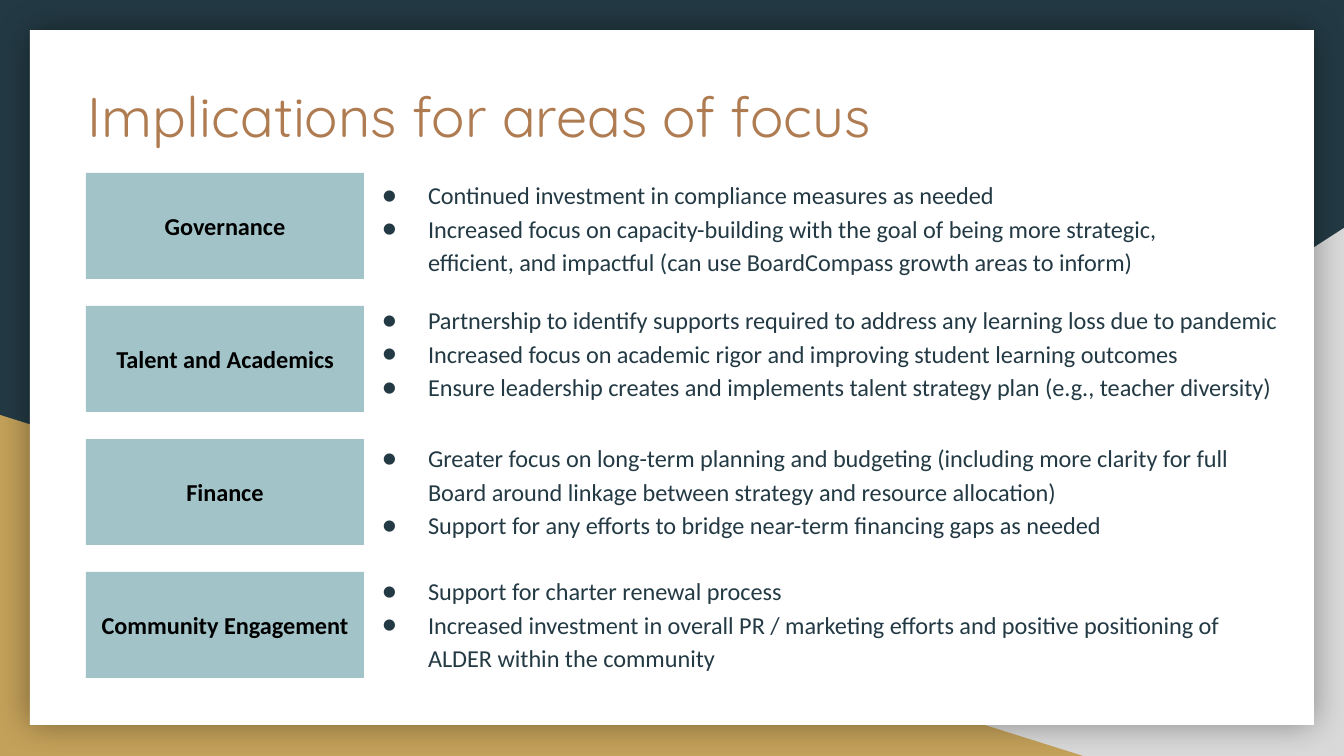
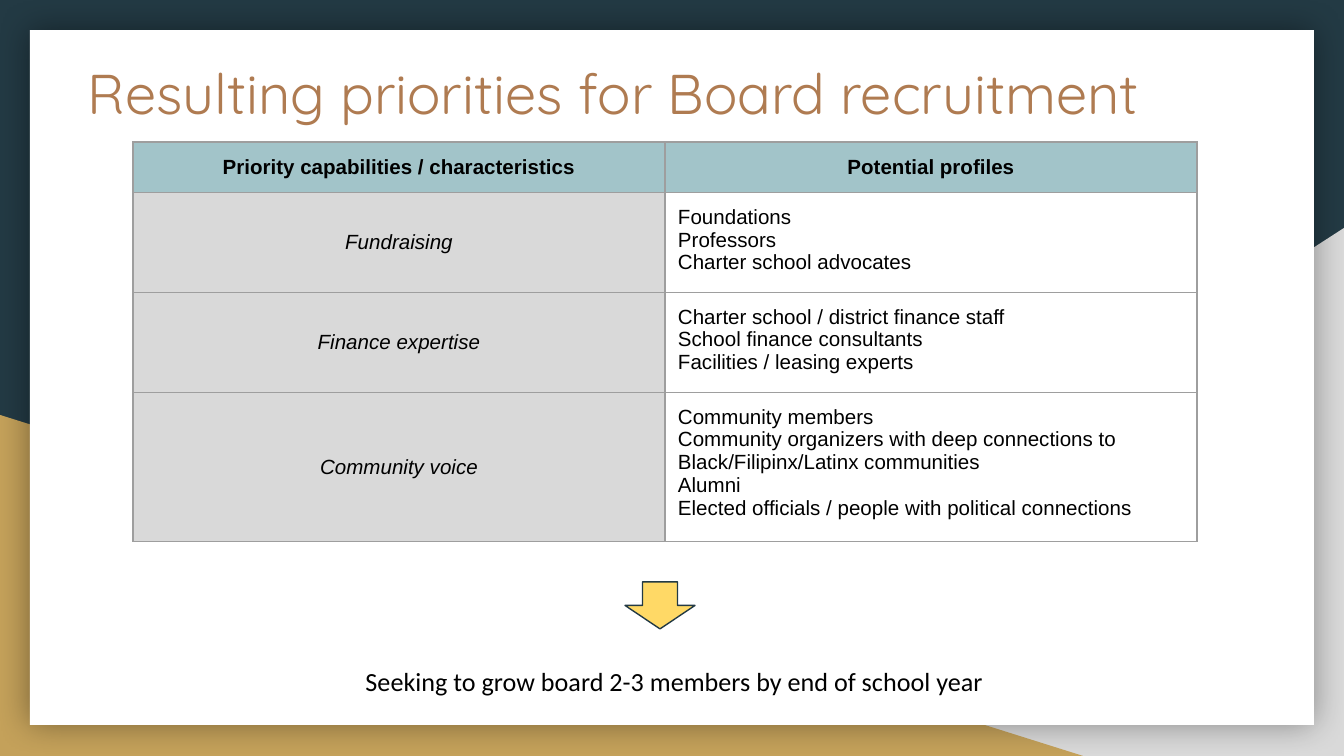
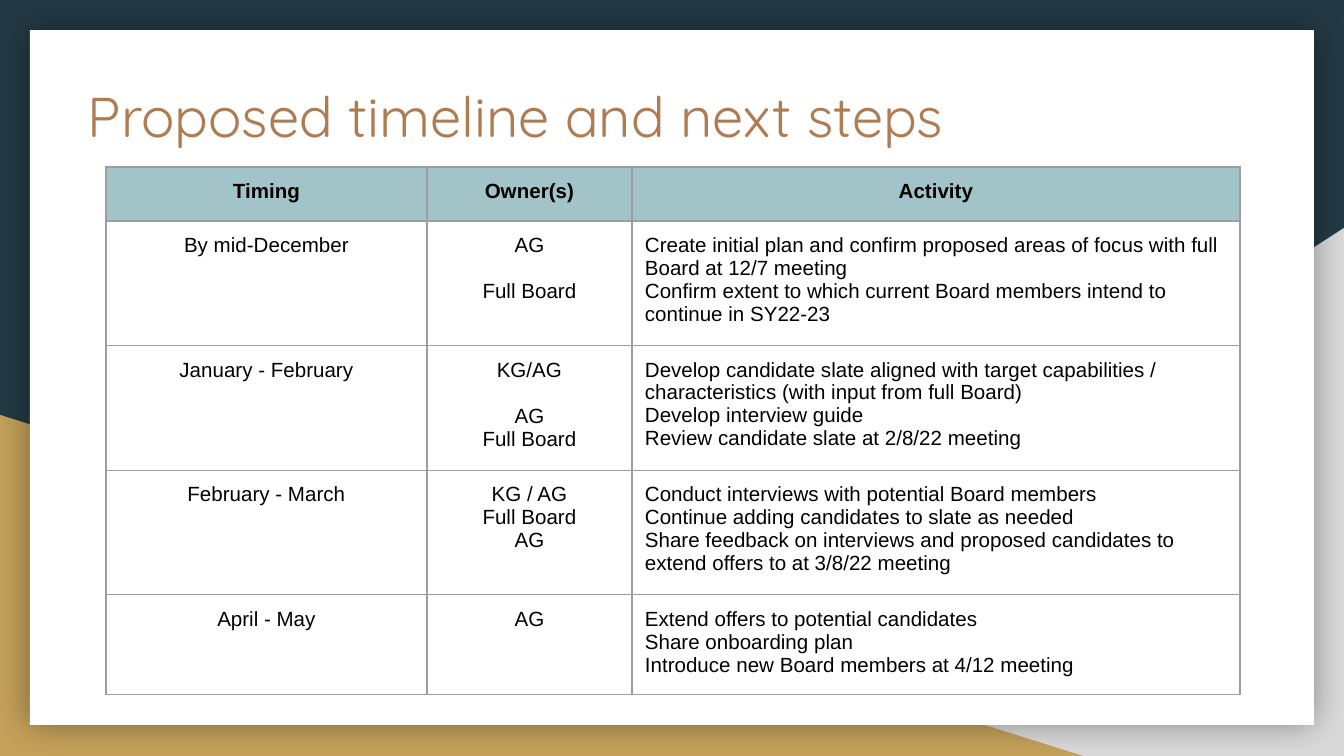
from lxml import etree
from pptx import Presentation
from pptx.dml.color import RGBColor
from pptx.enum.shapes import MSO_SHAPE
from pptx.enum.text import MSO_ANCHOR, PP_ALIGN
from pptx.oxml.ns import qn
from pptx.util import Pt

LEFT, CENTER = PP_ALIGN.LEFT, PP_ALIGN.CENTER
TOP, MIDDLE = MSO_ANCHOR.TOP, MSO_ANCHOR.MIDDLE
RECT, TRIANGLE = MSO_SHAPE.RECTANGLE, MSO_SHAPE.RIGHT_TRIANGLE
DOWN_ARROW = MSO_SHAPE.DOWN_ARROW

COLORS = {
    "navy": "233A44", "gold": "C4A15A", "gray": "D9D9D9", "white": "FFFFFF",
    "black": "000000", "copper": "AF7B51", "teal": "A2C4C9",
    "yellow": "FFD966", "border": "9E9E9E",
}
WIDTH, HEIGHT = 1344, 756
INSET = 13
CELL_LINE = 12.5  # height in points of one line of table text


def px(n):
    return round(n * 914400 / 134.4)


def rgb(name):
    return RGBColor.from_string(COLORS[name])


def sub(parent, tag, **attrs):
    return etree.SubElement(parent, qn(tag), {k: str(v) for k, v in attrs.items()})


class Deck:
    """Holds the presentation, its shared style and the current slide."""

    def __init__(self):
        self.prs = Presentation()
        self.prs.slide_width, self.prs.slide_height = px(WIDTH), px(HEIGHT)
        self.s = None

    def slide(self, title, title_top):
        self.s = self.prs.slides.add_slide(self.prs.slide_layouts[6])
        fill = self.s.background.fill
        fill.solid()
        fill.fore_color.rgb = rgb("navy")
        wedge = self.shape(TRIANGLE, 527, 228, 817, 528, "gray")
        wedge._element.spPr.find(qn("a:xfrm")).set("flipH", "1")
        self.shape(TRIANGLE, 0, 415, 1083, 341, "gold")
        self.soft_shadow(self.shape(RECT, 30, 30, 1284, 695, "white"))
        self.text(75, title_top, 1103, 140, title, size=30, font="Quicksand", color="copper")

    def shape(self, kind, x, y, w, h, fill, line=None):
        sp = self.s.shapes.add_shape(kind, px(x), px(y), px(w), px(h))
        sp.shadow.inherit = False
        sp.fill.solid()
        sp.fill.fore_color.rgb = rgb(fill)
        if line:
            sp.line.color.rgb = rgb(line)
            sp.line.width = Pt(0.75)
        else:
            sp.line.fill.background()
        return sp

    def soft_shadow(self, sp):
        effects = sp._element.spPr.find(qn("a:effectLst"))
        shadow = sub(effects, "a:outerShdw", blurRad=Pt(18), dist=0, algn="ctr", rotWithShape=0)
        color = sub(shadow, "a:srgbClr", val=COLORS["black"])
        sub(color, "a:alpha", val=40000)

    def fill_text(self, tf, text, size=13, font="Calibri", color="black", align=LEFT,
                  bold=False, italic=False, bullets=False):
        """Add one paragraph per line; an empty line becomes space before the next."""
        tf.word_wrap = True
        tf.margin_left = tf.margin_right = tf.margin_top = tf.margin_bottom = px(INSET)
        p, gap = tf.paragraphs[0], 0
        for i, line in enumerate(text.split("\n")):
            if not line:
                gap += CELL_LINE
                continue
            if i:
                p = tf.add_paragraph()
            p.alignment = align
            if gap:
                p.space_before = Pt(gap)
                gap = 0
            if bullets:
                self.bullet(p, color)
            r = p.add_run()
            r.text = line
            r.font.size, r.font.name = Pt(size), font
            r.font.bold, r.font.italic = bold, italic
            r.font.color.rgb = rgb(color)

    def bullet(self, p, color):
        p.line_spacing = 1.15
        pPr = p._p.get_or_add_pPr()
        pPr.set("marL", str(px(67)))
        pPr.set("indent", str(px(-46)))
        sub(sub(pPr, "a:buClr"), "a:srgbClr", val=COLORS[color])
        sub(pPr, "a:buFont", typeface="Calibri")
        sub(pPr, "a:buChar", char="●")

    def text(self, x, y, w, h, text, **style):
        tf = self.s.shapes.add_textbox(px(x), px(y), px(w), px(h)).text_frame
        self.fill_text(tf, text, **style)

    def label(self, x, y, w, h, text):
        tf = self.shape(RECT, x, y, w, h, "teal").text_frame
        tf.vertical_anchor = MIDDLE
        self.fill_text(tf, text, align=CENTER, bold=True)

    def table(self, x, y, widths, heights, rows, header, columns):
        """Draw rows, the first in the header style, the rest in their column's style."""
        tbl = self.s.shapes.add_table(len(rows), len(widths), px(x), px(y),
                                      px(sum(widths)), px(sum(heights))).table
        tbl.first_row = tbl.horz_banding = False
        for col, w in zip(tbl.columns, widths):
            col.width = px(w)
        for i, (h, row) in enumerate(zip(heights, rows)):
            tbl.rows[i].height = px(h)
            for j, text in enumerate(row):
                self.cell(tbl.cell(i, j), text, **(columns[j] if i else header))

    def cell(self, cell, text, fill=None, anchor=TOP, **style):
        self.fill_text(cell.text_frame, text, size=11, font="Arial", **style)
        cell.margin_left = cell.margin_right = px(INSET)
        cell.margin_top = cell.margin_bottom = px(INSET)
        cell.vertical_anchor = anchor
        tcPr = cell._tc.get_or_add_tcPr()
        for side in ("a:lnL", "a:lnR", "a:lnT", "a:lnB"):
            ln = sub(tcPr, side, w=Pt(0.75))
            sub(sub(ln, "a:solidFill"), "a:srgbClr", val=COLORS["border"])
        if fill:
            cell.fill.solid()
            cell.fill.fore_color.rgb = rgb(fill)
        else:
            cell.fill.background()


def focus_areas(deck):
    deck.slide("Implications for areas of focus", 69)
    areas = [
        ("Governance", 163, 909,
         "Continued investment in compliance measures as needed\n"
         "Increased focus on capacity-building with the goal of being more strategic, "
         "efficient, and impactful (can use BoardCompass growth areas to inform)"),
        ("Talent and Academics", 288, 949,
         "Partnership to identify supports required to address any learning loss due to pandemic\n"
         "Increased focus on academic rigor and improving student learning outcomes\n"
         "Ensure leadership creates and implements talent strategy plan (e.g., teacher diversity)"),
        ("Finance", 426, 909,
         "Greater focus on long-term planning and budgeting (including more clarity for full "
         "Board around linkage between strategy and resource allocation)\n"
         "Support for any efforts to bridge near-term financing gaps as needed"),
        ("Community Engagement", 559, 909,
         "Support for charter renewal process\n"
         "Increased investment in overall PR / marketing efforts and positive positioning of "
         "ALDER within the community"),
    ]
    for i, (name, top, width, points) in enumerate(areas):
        deck.text(348, top, width, min(239, HEIGHT - top), points, color="navy", bullets=True)
        deck.label(86, 173 + 133 * i, 278, 106, name)


def recruitment(deck):
    deck.slide("Resulting priorities for Board recruitment", 46)
    rows = [
        ("Priority capabilities / characteristics", "Potential profiles"),
        ("Fundraising", "Foundations\nProfessors\nCharter school advocates"),
        ("Finance expertise",
         "Charter school / district finance staff\nSchool finance consultants\n"
         "Facilities / leasing experts"),
        ("Community voice",
         "Community members\n"
         "Community organizers with deep connections to Black/Filipinx/Latinx communities\n"
         "Alumni\nElected officials / people with political connections"),
    ]
    deck.table(133, 142, [532, 532], [50, 95, 95, 141], rows,
               header=dict(fill="teal", anchor=MIDDLE, align=CENTER, bold=True),
               columns=[dict(fill="gray", anchor=MIDDLE, align=CENTER, italic=True), {}])
    deck.shape(DOWN_ARROW, 625, 582, 70, 47, "yellow", line="navy")
    deck.text(133, 652, 1083, 59, "Seeking to grow board 2-3 members by end of school year",
              size=14, align=CENTER)


def timeline(deck):
    deck.slide("Proposed timeline and next steps", 69)
    rows = [
        ("Timing", "Owner(s)", "Activity"),
        ("By mid-December", "AG\n\nFull Board",
         "Create initial plan and confirm proposed areas of focus with full Board at 12/7 meeting\n"
         "Confirm extent to which current Board members intend to continue in SY22-23"),
        ("January - February", "KG/AG\n\nAG\nFull Board",
         "Develop candidate slate aligned with target capabilities / characteristics "
         "(with input from full Board)\n"
         "Develop interview guide\nReview candidate slate at 2/8/22 meeting"),
        ("February - March", "KG / AG\nFull Board\nAG",
         "Conduct interviews with potential Board members\n"
         "Continue adding candidates to slate as needed\n"
         "Share feedback on interviews and proposed candidates to extend offers to "
         "at 3/8/22 meeting"),
        ("April - May", "AG",
         "Extend offers to potential candidates\nShare onboarding plan\n"
         "Introduce new Board members at 4/12 meeting"),
    ]
    centered = dict(align=CENTER)
    deck.table(106, 167, [321, 205, 608], [54, 118, 118, 118, 95], rows,
               header=dict(fill="teal", align=CENTER, bold=True),
               columns=[centered, centered, {}])


def main():
    deck = Deck()
    focus_areas(deck)
    recruitment(deck)
    timeline(deck)
    deck.prs.save("out.pptx")


if __name__ == "__main__":
    main()
